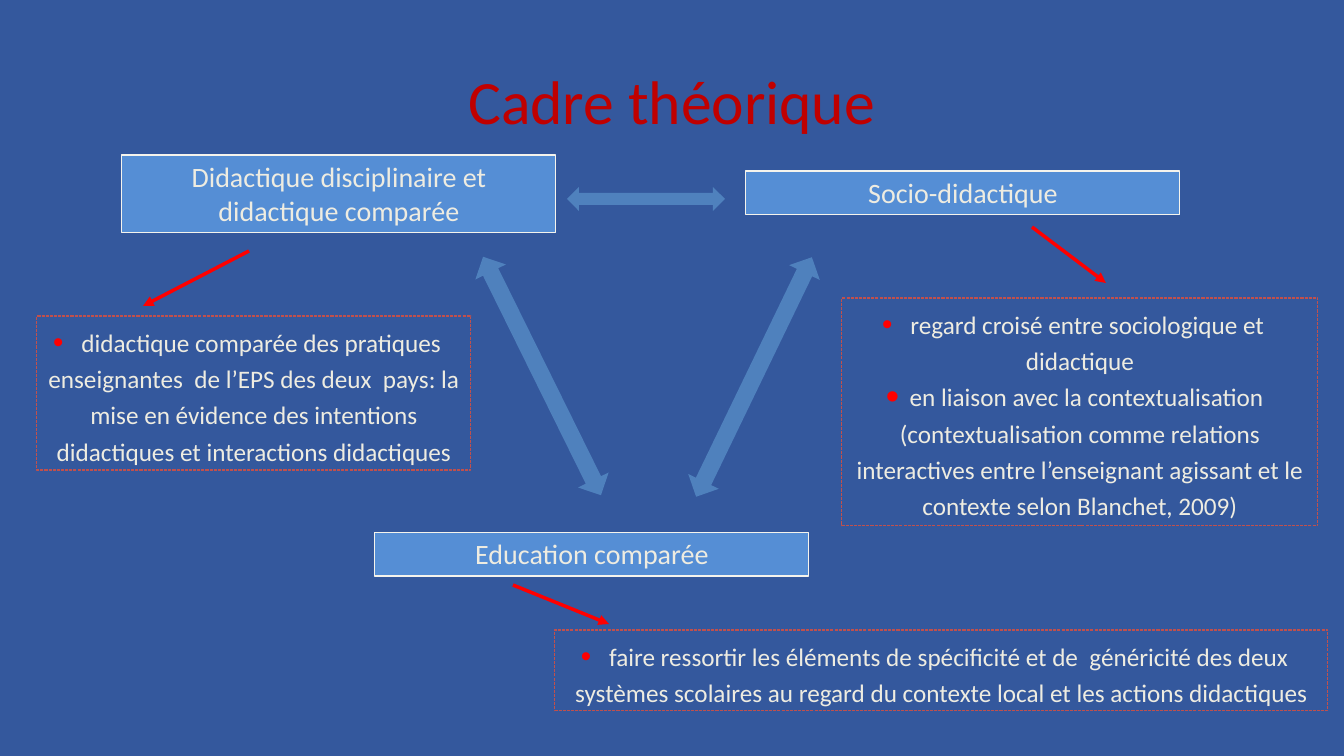
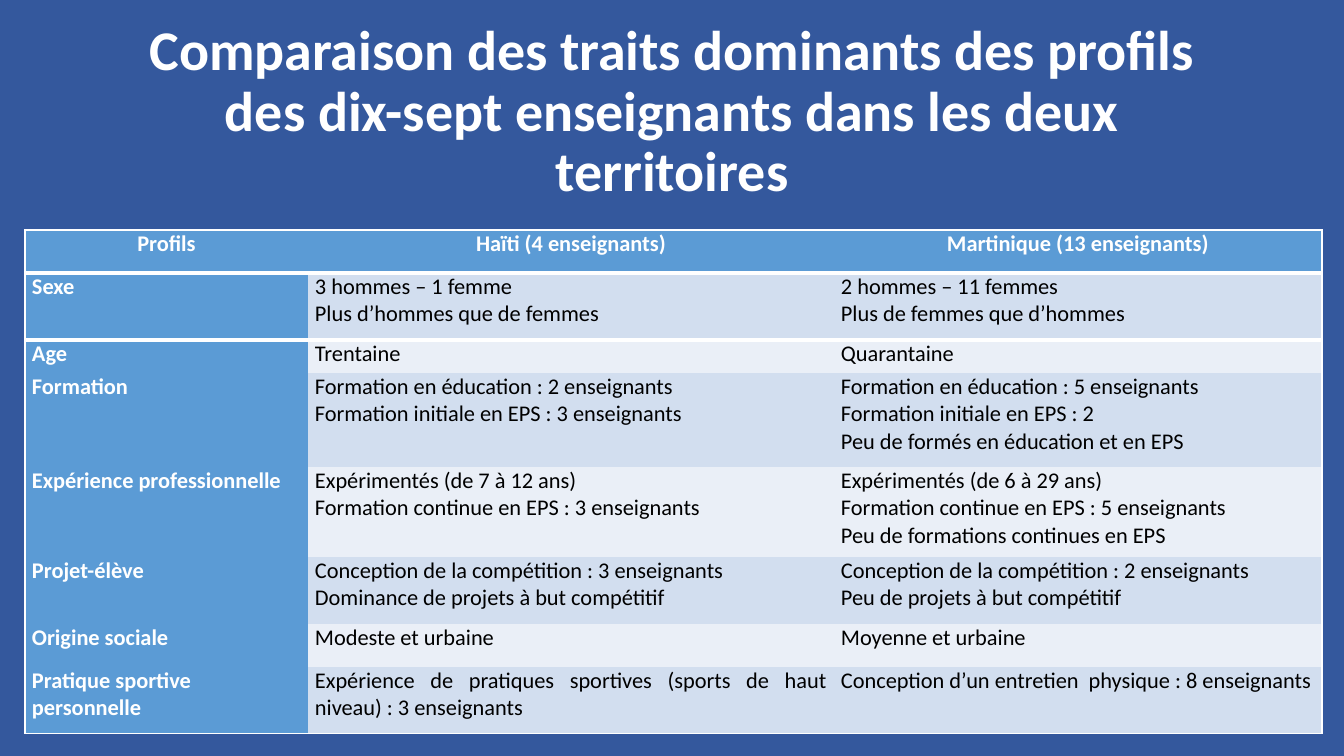
import lxml.etree
import pptx
import pptx.chart
import pptx.dml.color
import pptx.enum.dml
import pptx.enum.shapes
import pptx.enum.text
import pptx.oxml
import pptx.oxml.ns
import pptx.util

COLORS = {
    "background": "34589D",
    "title_red": "C00000",
    "white": "FFFFFF",
    "black": "000000",
    "concept": "558ED5",
    "concept_line": "F5F4ED",
    "cream": "EEECE1",
    "detail_line": "C0504D",
    "red": "FF0000",
    "link": "4F81BD",
    "header": "5B9BD5",
    "band_dark": "D2DEEF",
    "band_light": "EAEFF7",
}
RGB = {name: pptx.dml.color.RGBColor.from_string(value) for name, value in COLORS.items()}
ALIGN = pptx.enum.text.PP_ALIGN
SHAPES = pptx.enum.shapes.MSO_SHAPE
qn = pptx.oxml.ns.qn


def px(length):
    return round(length * 12192000 / 1344)


def format_paragraph(paragraph, size, color, bold=False, align=ALIGN.CENTER):
    paragraph.alignment = align
    for run in paragraph.runs:
        run.font.name = "Calibri"
        run.font.size = pptx.util.Pt(size)
        run.font.bold = bold
        run.font.color.rgb = RGB[color]


presentation = pptx.Presentation()
presentation.slide_width, presentation.slide_height = px(1344), px(756)
master_fill = presentation.slide_master.background.fill
master_fill.solid()
master_fill.fore_color.rgb = RGB["background"]

titles = [
    ("Cadre théorique", 32, 44, "title_red", False),
    ("Comparaison des traits dominants des profils des dix-sept enseignants dans les deux territoires",
     40, 40, "white", True),
]
slides = []
for text, top, size, color, bold in titles:
    slide = presentation.slides.add_slide(presentation.slide_layouts[5])
    title = slide.shapes.title
    title.left, title.top, title.width, title.height = px(97), px(top), px(1150), px(146)
    title.text_frame.text = text
    title.text_frame.auto_size = pptx.enum.text.MSO_AUTO_SIZE.NONE
    title.text_frame.vertical_anchor = pptx.enum.text.MSO_ANCHOR.MIDDLE
    title.text_frame.paragraphs[0].line_spacing = 0.9
    format_paragraph(title.text_frame.paragraphs[0], size, color, bold)
    slides.append(slide)
framework_slide, comparison_slide = slides

boxes = [
    ("concept", 122, 155, 434, 78, ["Didactique disciplinaire et didactique comparée"]),
    ("concept", 746, 171, 434, 44, ["Socio-didactique"]),
    ("concept", 375, 532, 434, 44, ["Education comparée"]),
    ("detail", 842, 298, 476, 228, [
        "regard croisé entre sociologique et didactique",
        "en liaison avec la contextualisation (contextualisation comme relations interactives "
        "entre l’enseignant agissant et le contexte selon Blanchet, 2009)"]),
    ("detail", 37, 316, 434, 154, [
        "didactique comparée des pratiques enseignantes  de l’EPS des deux  pays: la mise en "
        "évidence des intentions didactiques et interactions didactiques"]),
    ("detail", 555, 630, 773, 81, [
        "faire ressortir les éléments de spécificité et de  généricité des deux systèmes "
        "scolaires au regard du contexte local et les actions didactiques"]),
]
for kind, left, top, width, height, texts in boxes:
    box = framework_slide.shapes.add_textbox(px(left), px(top), px(width), px(height))
    box.line.color.rgb = RGB[kind + "_line"]
    box.line.width = pptx.util.Pt(0.75)
    text_frame = box.text_frame
    text_frame.word_wrap = True
    text_frame.auto_size = pptx.enum.text.MSO_AUTO_SIZE.SHAPE_TO_FIT_TEXT
    text_frame.text = "\n".join(texts)
    if kind == "concept":
        box.fill.solid()
        box.fill.fore_color.rgb = RGB["concept"]
        format_paragraph(text_frame.paragraphs[0], 20, "cream")
        continue
    box.line.dash_style = pptx.enum.dml.MSO_LINE.SQUARE_DOT
    for index, paragraph in enumerate(text_frame.paragraphs):
        if index == 0:
            paragraph.text = " "
            paragraph.add_run().text = texts[0]
        format_paragraph(paragraph, 18, "cream")
        if index == 0:
            paragraph.runs[0].font.size = pptx.util.Pt(14)
        paragraph.line_spacing = 1.2
        properties = paragraph.runs[0].font._element.getparent().getparent().find(qn("a:pPr"))
        bullet_color = lxml.etree.SubElement(properties, qn("a:buClr"))
        lxml.etree.SubElement(bullet_color, qn("a:srgbClr"), val=COLORS["red"])
        lxml.etree.SubElement(properties, qn("a:buSzPct"), val="151000")
        lxml.etree.SubElement(properties, qn("a:buFont"), typeface="Arial")
        lxml.etree.SubElement(properties, qn("a:buChar"), char="•")

detail_arrows = [(1032, 227, 1106, 283), (513, 585, 609, 624), (249, 251, 143, 306)]
for points in detail_arrows:
    arrow = framework_slide.shapes.add_connector(
        pptx.enum.shapes.MSO_CONNECTOR.STRAIGHT, *map(px, points))
    arrow.line.color.rgb = RGB["red"]
    arrow.line.width = pptx.util.Pt(2.5)
    lxml.etree.SubElement(arrow.line._get_or_add_ln(), qn("a:tailEnd"), type="triangle")
    lxml.etree.SubElement(arrow._element.spPr, qn("a:effectLst"))

concept_links = [(621, 360, 266, 34, 115.8), (409, 359, 266, 34, 63.7), (567, 187, 158, 24, 0)]
for left, top, width, height, rotation in concept_links:
    link = framework_slide.shapes.add_shape(
        SHAPES.LEFT_RIGHT_ARROW, px(left), px(top), px(width), px(height))
    link.rotation = rotation
    link.shadow.inherit = False
    link.fill.solid()
    link.fill.fore_color.rgb = RGB["link"]
    link.line.fill.background()

profiles = [
    ("Profils", "Haïti (4 enseignants)", "Martinique (13 enseignants)"),
    ("Sexe", "3 hommes – 1 femme\nPlus d’hommes que de femmes",
     "2 hommes – 11 femmes\nPlus de femmes que d’hommes"),
    ("Age", "Trentaine", "Quarantaine"),
    ("Formation", "Formation en éducation : 2 enseignants\nFormation initiale en EPS : 3 enseignants",
     "Formation en éducation : 5 enseignants\nFormation initiale en EPS : 2\n"
     "Peu de formés en éducation et en EPS"),
    ("Expérience professionnelle",
     "Expérimentés (de 7 à 12 ans)\nFormation continue en EPS : 3 enseignants",
     "Expérimentés (de 6 à 29 ans)\nFormation continue en EPS : 5 enseignants\n"
     "Peu de formations continues en EPS"),
    ("Projet-élève",
     "Conception de la compétition : 3 enseignants\nDominance de projets à but compétitif",
     "Conception de la compétition : 2 enseignants\nPeu de projets à but compétitif"),
    ("Origine sociale", "Modeste et urbaine", "Moyenne et urbaine"),
    ("Pratique sportive personnelle",
     "Expérience de pratiques sportives (sports de haut niveau) : 3 enseignants",
     "Conception d’un entretien  physique : 8 enseignants"),
]
column_widths = [283, 526, 488]
row_heights = [43, 67, 33, 94, 90, 67, 43, 67]
last_row, last_column = len(row_heights) - 1, len(column_widths) - 1
table_frame = comparison_slide.shapes.add_table(
    len(row_heights), len(column_widths), px(25), px(230), px(sum(column_widths)), px(sum(row_heights)))
table = table_frame.table
table.horz_banding = False
table.first_row = False
table._tbl.tblPr.find(qn("a:tableStyleId")).text = "{2D5ABB26-0587-4C30-8999-92F81FD0307C}"
for column, width in zip(table.columns, column_widths):
    column.width = px(width)
for row, height in zip(table.rows, row_heights):
    row.height = px(height)

for row_index, texts in enumerate(profiles):
    for column_index, text in enumerate(texts):
        cell = table.cell(row_index, column_index)
        cell.margin_left = cell.margin_right = px(7)
        cell.margin_top = cell.margin_bottom = 0
        cell.text_frame.text = text
        is_heading = row_index == 0 or column_index == 0
        if row_index == 0:
            align = ALIGN.CENTER
        elif row_index == last_row and column_index == 0:
            align = ALIGN.LEFT
        else:
            align = ALIGN.JUSTIFY
        for paragraph in cell.text_frame.paragraphs:
            format_paragraph(paragraph, 16, "white" if is_heading else "black", is_heading, align)

        borders = [
            ("a:lnL", 1 if column_index == 0 else 0),
            ("a:lnR", 1 if column_index == last_column else 0),
            ("a:lnT", {0: 1, 1: 3}.get(row_index, 0)),
            ("a:lnB", {0: 3, last_row: 1}.get(row_index, 0)),
        ]
        cell_properties = cell._tc.get_or_add_tcPr()
        for tag, points in borders:
            if points:
                border = lxml.etree.SubElement(cell_properties, qn(tag), w=str(pptx.util.Pt(points)))
                border_fill = lxml.etree.SubElement(border, qn("a:solidFill"))
                lxml.etree.SubElement(border_fill, qn("a:srgbClr"), val=COLORS["white"])
        cell.fill.solid()
        band = "band_dark" if row_index % 2 else "band_light"
        cell.fill.fore_color.rgb = RGB["header" if is_heading else band]

presentation.save("out.pptx")
